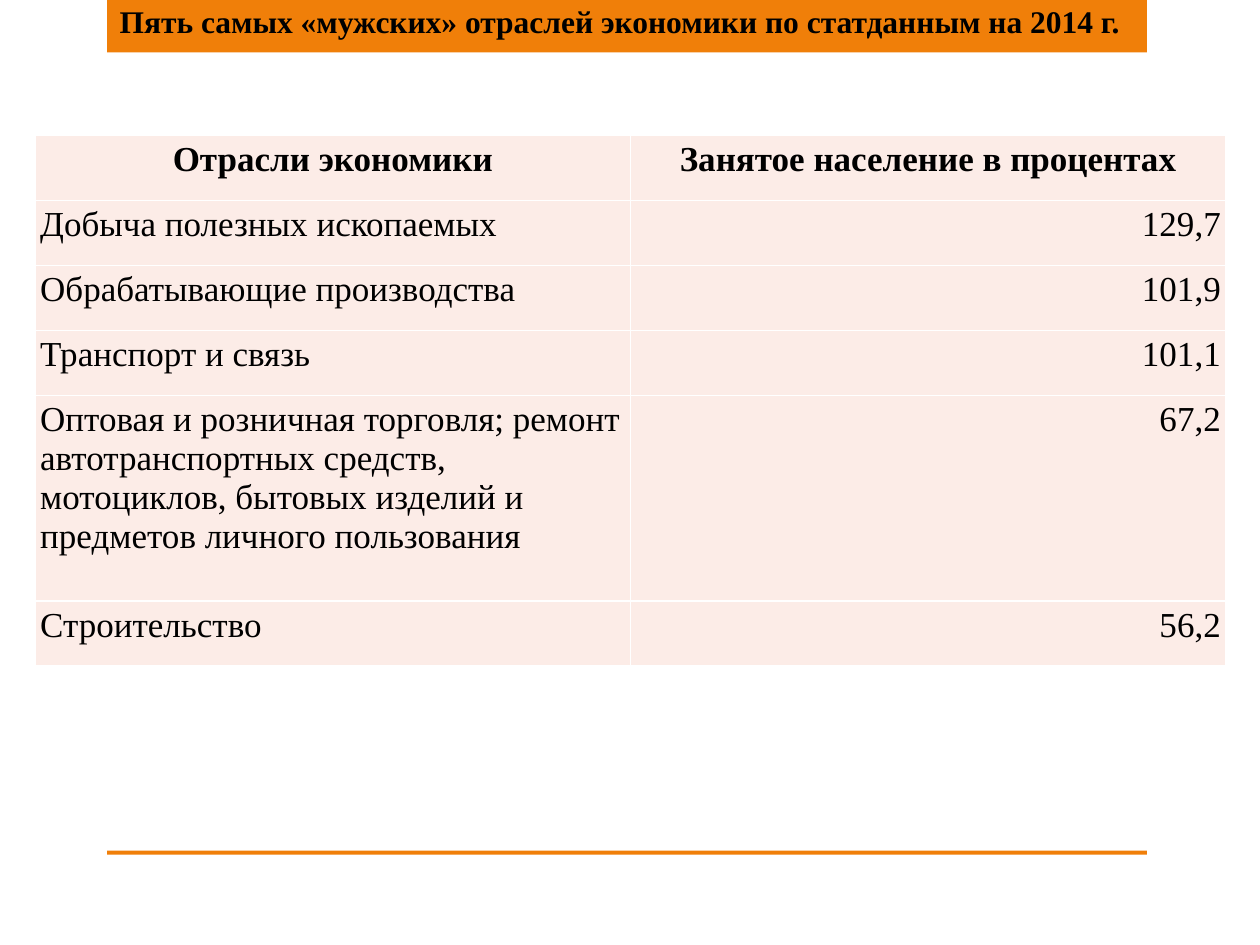
from pptx import Presentation
from pptx.dml.color import RGBColor
from pptx.enum.shapes import MSO_SHAPE as Shape
from pptx.enum.text import MSO_ANCHOR as Anchor, MSO_AUTO_SIZE as AutoSize, PP_ALIGN as Align
from pptx.oxml import parse_xml
from pptx.oxml.ns import nsdecls
from pptx.util import Cm, Pt

COLORS = {"accent": "F07F09", "cell": "FCECE7", "border": "FFFFFF", "text": "000000"}
FONT = "Times New Roman"


def add_run(paragraph, text, size, bold):
    run = paragraph.add_run()
    run.text = text
    run.font.name = FONT
    run.font.size = Pt(size)
    run.font.bold = bold
    run.font.color.rgb = RGBColor.from_string(COLORS["text"])


def add_borders(cell):
    properties = cell._tc.get_or_add_tcPr()
    for position, side in enumerate(("lnL", "lnR", "lnT", "lnB")):
        properties.insert(position, parse_xml(
            f'<a:{side} {nsdecls("a")} w="{Pt(1)}"><a:solidFill>'
            f'<a:srgbClr val="{COLORS["border"]}"/></a:solidFill></a:{side}>'))


presentation = Presentation()
presentation.slide_width = Cm(25.4)
presentation.slide_height = Cm(19.05)
slide = presentation.slides.add_slide(presentation.slide_layouts[5])

# Header band and footer rule
for top, height in ((0, 1.06), (17.15, 0.08)):
    band = slide.shapes.add_shape(Shape.RECTANGLE, Cm(2.16), Cm(top), Cm(20.96), Cm(height))
    band.shadow.inherit = False
    band.fill.solid()
    band.fill.fore_color.rgb = RGBColor.from_string(COLORS["accent"])
    band.line.fill.background()

# Title, brought in front of the header band
heading = slide.shapes.title
heading.element.getparent().append(heading.element)
heading.left, heading.top, heading.width, heading.height = Cm(2.1), Cm(-0.08), Cm(20.8), Cm(1.02)
frame = heading.text_frame
frame.auto_size = AutoSize.NONE
frame.word_wrap = True
frame.vertical_anchor = Anchor.MIDDLE
frame.margin_left = frame.margin_right = frame.margin_top = frame.margin_bottom = 0
frame.paragraphs[0].alignment = Align.CENTER
add_run(frame.paragraphs[0],
        "Пять самых «мужских» отраслей экономики по статданным на 2014 г.", 18, True)

# Table of industries
industries = [
    ("Отрасли экономики", "Занятое население в процентах"),
    ("Добыча полезных ископаемых", "129,7"),
    ("Обрабатывающие производства", "101,9"),
    ("Транспорт и связь", "101,1"),
    ("Оптовая и розничная торговля; ремонт автотранспортных средств, "
     "мотоциклов, бытовых изделий и предметов личного пользования", "67,2"),
    ("Строительство", "56,2"),
]
row_heights = [1.31, 1.31, 1.31, 1.31, 4.15, 1.31]
table = slide.shapes.add_table(len(industries), 2, Cm(0.71), Cm(2.73),
                               Cm(24), Cm(sum(row_heights))).table
for column in table.columns:
    column.width = Cm(12)

for row_index, (texts, row_height) in enumerate(zip(industries, row_heights)):
    table.rows[row_index].height = Cm(row_height)
    is_header = row_index == 0
    for column_index, text in enumerate(texts):
        cell = table.cell(row_index, column_index)
        cell.margin_left = cell.margin_right = cell.margin_top = cell.margin_bottom = Cm(0.1)
        cell.fill.solid()
        cell.fill.fore_color.rgb = RGBColor.from_string(COLORS["cell"])
        add_borders(cell)
        paragraph = cell.text_frame.paragraphs[0]
        paragraph.alignment = Align.CENTER if is_header else (Align.LEFT, Align.RIGHT)[column_index]
        add_run(paragraph, text, 20, is_header)

presentation.save("out.pptx")
